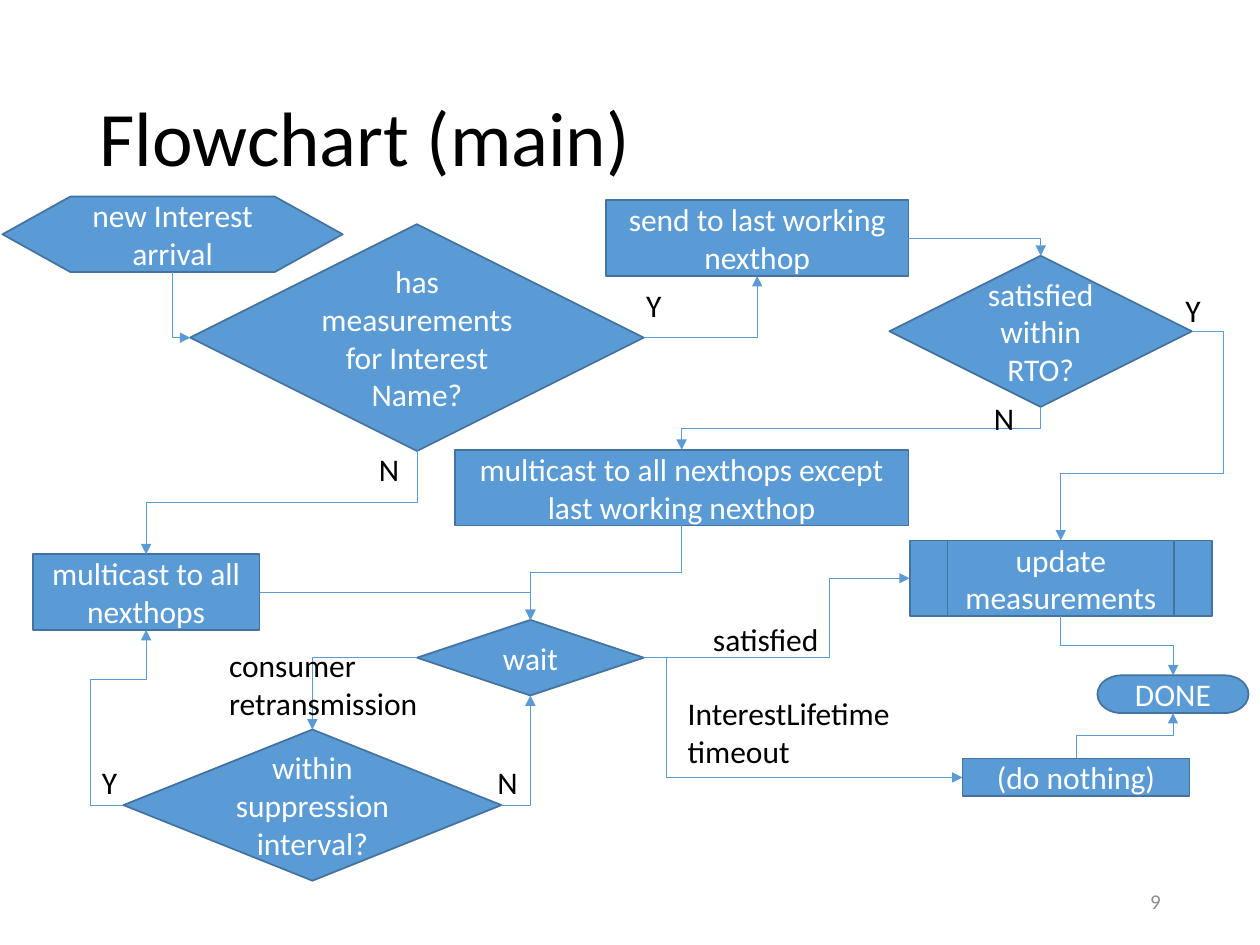
from lxml import etree
from pptx import Presentation, util as u
from pptx.dml.color import RGBColor
from pptx.enum import shapes, text
from pptx.oxml import ns

COLUMNS, ROWS = 100, 75
SLIDE_W, SLIDE_H = u.Inches(10), u.Inches(7.5)
BLUE = RGBColor(0x5B, 0x9B, 0xD5)
DARK_BLUE = RGBColor(0x43, 0x73, 0x9E)
WHITE = RGBColor(0xFF, 0xFF, 0xFF)
BLACK = RGBColor(0x00, 0x00, 0x00)
GRAY = RGBColor(0x8C, 0x8C, 0x8C)
TOP, LEFT, BOTTOM, RIGHT = range(4)
MIDDLE = text.MSO_ANCHOR.MIDDLE
ALIGN = text.PP_ALIGN
KIND = shapes.MSO_SHAPE

STEPS = {
    "arrival": ("new Interest arrival", KIND.FLOWCHART_PREPARATION, 0.2, 0.6, 27, 6),
    "known": ("has measurements for Interest Name?", KIND.FLOWCHART_DECISION, 15.1, 2.8, 36, 18),
    "all": ("multicast to all nexthops", KIND.FLOWCHART_PROCESS, 2.6, 29, 18, 6),
    "last": ("send to last working nexthop", KIND.FLOWCHART_PROCESS, 48.1, 0.9, 24, 6),
    "rto": ("satisfied within RTO?", KIND.FLOWCHART_DECISION, 70.6, 5.3, 24, 12),
    "others": ("multicast to all nexthops except last working nexthop",
               KIND.FLOWCHART_PROCESS, 36.1, 20.7, 36, 6),
    "wait": ("wait", KIND.FLOWCHART_DECISION, 33.1, 34.2, 18, 6),
    "done": ("DONE", KIND.FLOWCHART_TERMINATOR, 87.1, 38.6, 12, 3),
    "suppress": ("within suppression interval?", KIND.FLOWCHART_DECISION, 9.8, 42.9, 30, 12),
    "nothing": ("(do nothing)", KIND.FLOWCHART_PROCESS, 76.4, 45.2, 18, 3),
    "update": ("update measurements", KIND.FLOWCHART_PREDEFINED_PROCESS, 72.2, 27.9, 24, 6),
}
LINKS = [
    ("arrival", BOTTOM, "known", LEFT, []),
    ("known", RIGHT, "last", BOTTOM, []),
    ("known", BOTTOM, "all", TOP, [0.5]),
    ("last", RIGHT, "rto", TOP, []),
    ("rto", BOTTOM, "others", TOP, [0.5]),
    ("rto", RIGHT, "update", TOP, [-0.24, 0.68]),
    ("others", BOTTOM, "wait", TOP, [0.5]),
    ("all", RIGHT, "wait", TOP, []),
    ("wait", LEFT, "suppress", TOP, []),
    ("wait", RIGHT, "update", LEFT, [0.7]),
    ("wait", RIGHT, "nothing", LEFT, [0.07]),
    ("suppress", LEFT, "all", BOTTOM, [-1.45, 0.72]),
    ("suppress", RIGHT, "wait", BOTTOM, []),
    ("update", BOTTOM, "done", TOP, [0.5]),
    ("nothing", TOP, "done", BOTTOM, [0.5]),
]
LABELS = [
    ("Y", 50.3, 7.2, 3.2, 4, False),
    ("N", 29.1, 20.2, 3.6, 4, False),
    ("Y", 93.1, 7.6, 3.2, 4, False),
    ("N", 77.9, 16.2, 3.6, 4, False),
    ("satisfied", 55.6, 33.7, 10.5, 4, False),
    ("consumer retransmission", 17.2, 35.8, 18.4, 7.1, True),
    ("InterestLifetime timeout", 53.6, 39.6, 20.3, 7.1, True),
    ("Y", 7.1, 45.1, 3.2, 4, False),
    ("N", 38.5, 45.1, 3.6, 4, False),
]


def place(box, column=0, row=0, width=None, height=None):
    """Turn grid cells inside a box into slide lengths."""
    left, top, box_width, box_height = box
    cells = (left + column, top + row, width or box_width, height or box_height)
    units = (SLIDE_W / COLUMNS, SLIDE_H / ROWS) * 2
    return [round(cell * unit) for cell, unit in zip(cells, units)]


def apply(target, formats):
    """Set each named attribute on the target."""
    for name, value in formats.items():
        setattr(target, name, value)


def write(holder, words, size, color, paragraph_format, frame_format):
    """Fill a shape's frame with one formatted paragraph."""
    apply(holder.text_frame, {"word_wrap": True, **frame_format})
    paragraph = holder.text_frame.paragraphs[0]
    paragraph.text = words
    apply(paragraph, paragraph_format)
    apply(paragraph.font, {"name": "Calibri", "size": u.Pt(size)})
    paragraph.font.color.rgb = color


def add_caption(slide, cells, words, size, color, paragraph_format, frame_format):
    """Add a text box with one formatted paragraph."""
    caption = slide.shapes.add_textbox(*cells)
    write(caption, words, size, color, paragraph_format, frame_format)


def add_step(slide, cells, words, kind):
    """Add one flowchart symbol."""
    step = slide.shapes.add_shape(kind, *cells)
    step.shadow.inherit = False
    step.fill.solid()
    step.fill.fore_color.rgb = BLUE
    step.line.color.rgb = DARK_BLUE
    step.line.width = u.Pt(1)
    write(step, words, 18, WHITE, {"alignment": ALIGN.CENTER}, {"vertical_anchor": MIDDLE})
    return step


def add_link(slide, source, exit_side, target, entry_side, bends):
    """Join two steps with an elbow arrow whose bends are shares of its extent."""
    link = slide.shapes.add_connector(shapes.MSO_CONNECTOR.ELBOW, 0, 0, 0, 0)
    link.begin_connect(source, exit_side)
    link.end_connect(target, entry_side)
    route_link(link, exit_side in (TOP, BOTTOM), bends)
    link.line.color.rgb = BLUE
    link.line.width = u.Pt(0.5)
    etree.SubElement(link.line._get_or_add_ln(), ns.qn("a:tailEnd"), type="triangle")
    etree.SubElement(link._element.spPr, ns.qn("a:effectLst"))


def route_link(link, vertical, bends):
    """Set the elbow's preset, bends, flips and rotation from its two ends."""
    dx, dy = link.end_x - link.begin_x, link.end_y - link.begin_y
    frame = link._element.spPr.find(ns.qn("a:xfrm"))
    geometry = link._element.spPr.find(ns.qn("a:prstGeom"))
    geometry.set("prst", f"bentConnector{len(bends) + 2}")
    for number, bend in enumerate(bends, 1):
        etree.SubElement(geometry.find(ns.qn("a:avLst")), ns.qn("a:gd"),
                         name=f"adj{number}", fmla=f"val {round(bend * 100000)}")
    flips = {"flipH": dx < 0, "flipV": dy < 0}
    if vertical:
        turned = dx > 0 and dy > 0
        flips = {"flipH": turned or dy < 0, "flipV": dx > 0 and not turned}
        left = (link.begin_x + link.end_x - abs(dy)) // 2
        top = (link.begin_y + link.end_y - abs(dx)) // 2
        apply(link, {"left": left, "top": top, "width": abs(dy), "height": abs(dx)})
        frame.set("rot", str((270 if turned else 90) * 60000))
    for name, flipped in flips.items():
        frame.set(name, str(int(flipped)))


def add_flowchart(slide, box):
    """Draw the steps, their links and the branch labels."""
    steps = {key: add_step(slide, place(box, *cells), words, kind)
             for key, (words, kind, *cells) in STEPS.items()}
    for source, exit_side, target, entry_side, bends in LINKS:
        add_link(slide, steps[source], exit_side, steps[target], entry_side, bends)
    for words, *cells, wrap in LABELS:
        add_caption(slide, place(box, *cells), words, 18, BLACK, {},
                    {"word_wrap": wrap, "auto_size": text.MSO_AUTO_SIZE.SHAPE_TO_FIT_TEXT})


def add_heading(slide, box):
    """Write the slide's title."""
    add_caption(slide, place(box), "Flowchart (main)", 44, BLACK,
                {"line_spacing": 0.9}, {"vertical_anchor": MIDDLE})


def add_page_number(slide, box):
    """Write the page number at the right of its box."""
    add_caption(slide, place(box), "9", 12, GRAY,
                {"alignment": ALIGN.RIGHT}, {"vertical_anchor": MIDDLE})


def main():
    """Build the slide and save it."""
    deck = Presentation()
    apply(deck, {"slide_width": SLIDE_W, "slide_height": SLIDE_H})
    slide = deck.slides.add_slide(deck.slide_layouts[6])
    add_flowchart(slide, (0, 15, COLUMNS, 55))
    add_heading(slide, (6.9, 4, 86.2, 14.5))
    add_page_number(slide, (70.6, 69.5, 22.5, 4))
    deck.save("out.pptx")


if __name__ == "__main__":
    main()
